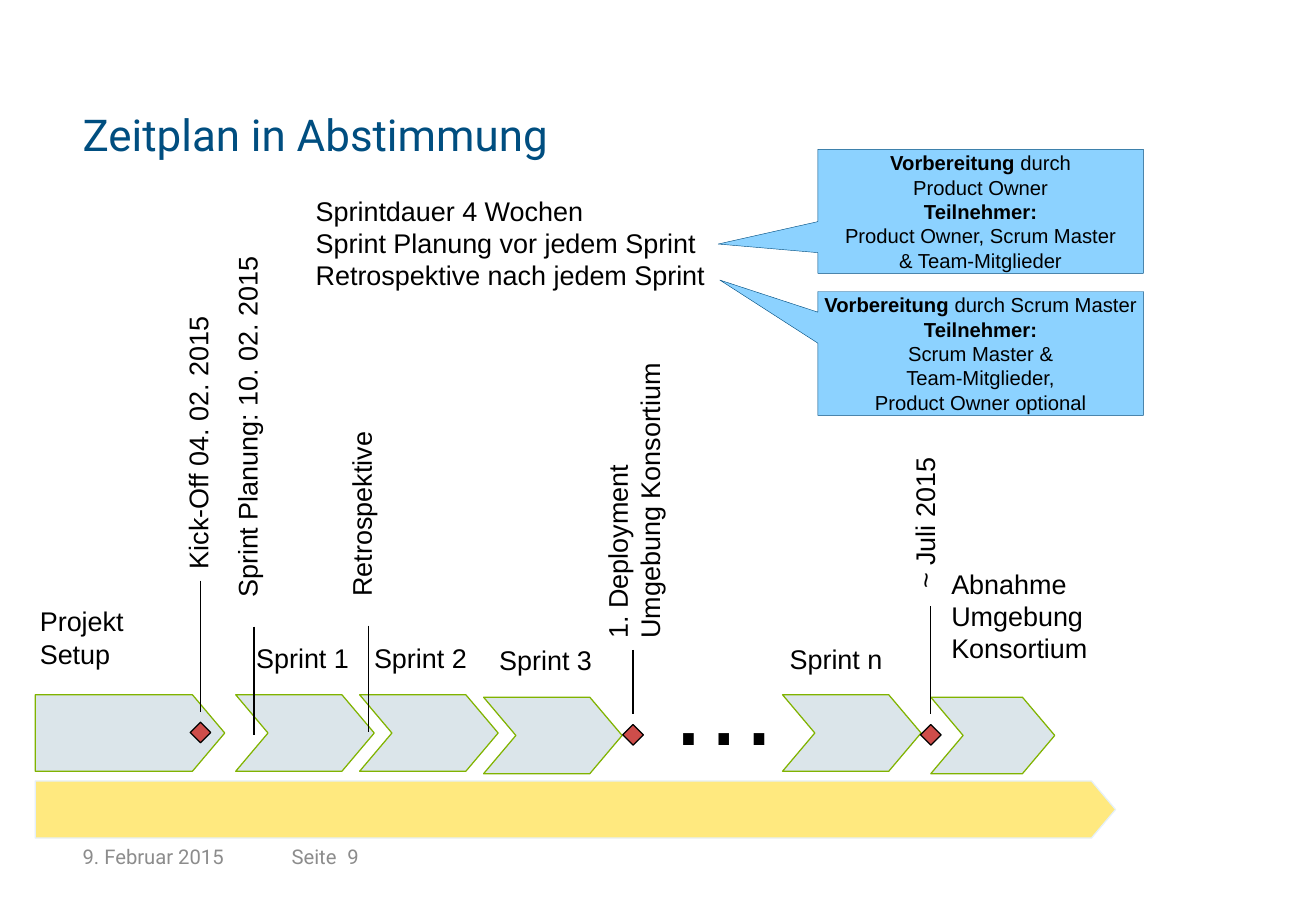
from dataclasses import dataclass

from lxml import etree
from pptx import Presentation
from pptx.dml.color import RGBColor
from pptx.enum.shapes import MSO_CONNECTOR, MSO_SHAPE
from pptx.enum.text import MSO_ANCHOR, PP_ALIGN
from pptx.oxml.ns import qn
from pptx.util import Inches, Pt

LINE = MSO_CONNECTOR.STRAIGHT
RECT, PLATE = MSO_SHAPE.RECTANGLE, MSO_SHAPE.PENTAGON
CHEVRON, CALLOUT = MSO_SHAPE.CHEVRON, MSO_SHAPE.RECTANGULAR_CALLOUT
TOP, MIDDLE, BOTTOM = MSO_ANCHOR.TOP, MSO_ANCHOR.MIDDLE, MSO_ANCHOR.BOTTOM
LEFT, CENTER, RIGHT = PP_ALIGN.LEFT, PP_ALIGN.CENTER, PP_ALIGN.RIGHT


@dataclass(frozen=True)
class Theme:
    head: str = "Roboto"
    body: str = "Arial"
    navy: str = "004E80"
    gray: str = "8C8C8C"
    black: str = "000000"
    gold: str = "FFD500"
    pale: str = "E5F0F9"
    steel: str = "B9CCD7"
    green: str = "80B300"
    red: str = "CE4D4A"
    sky: str = "66C3FF"
    title: int = 26
    text: int = 16
    small: int = 12
    dots: int = 66
    thin: float = 0.75
    hair: float = 0.25


THEME = Theme()

# Phase: column, width, row shift, label column, label row, label
PITCH = 10.2
PHASES = [
    (16.5, 11.4, 0, 17.2, 37.3, "Sprint 1"),
    (16.5 + PITCH, 11.4, 0, 26.9, 37.3, "Sprint 2"),
    (16.5 + 2 * PITCH, 11.4, 0.2, 37.2, 37.5, "Sprint 3"),
    (61.5, 11.4, 0, 61.1, 37.4, "Sprint n"),
    (73.7, 10.2, 0.2, 74.4, 31.2, "Abnahme\nUmgebung\nKonsortium"),
]

# Event: column, line top, line end, label centre, label foot, length, label, diamond row
EVENTS = [
    (13.6, 32.8, 43.6, 13.55, 32.85, 25.7, "Kick-Off 04. 02. 2015", 45.3),
    (18, 36.6, 45.5, 17.6, 35.2, 34, "Sprint Planung: 10. 02. 2015", None),
    (27.4, 36.5, 45.3, 27, 35.1, 17.4, "Retrospektive", None),
    (49.2, 38.5, 43.8, 49.6, 38.55, 27.8, "1. Deployment\nUmgebung Konsortium", 45.5),
    (73.7, 34.9, 43.8, 73.35, 34.45, 14.3, "~ Juli 2015", 45.5),
]

# Callout: row, pointer, lines of (text, bold) runs
CALLOUTS = [
    (0, (-0.806, 0.264), [
        [("Vorbereitung", True), (" durch", False)],
        [("Product Owner", False)],
        [("Teilnehmer:", True)],
        [("Product Owner, Scrum Master", False)],
        [("& Team-Mitglieder", False)],
    ]),
    (11.7, (-0.801, -0.593), [
        [("Vorbereitung", True), (" durch Scrum Master", False)],
        [("Teilnehmer:", True)],
        [("Scrum Master &", False)],
        [("Team-Mitglieder,", False)],
        [("Product Owner optional", False)],
    ]),
]


def grid(*cells):
    """Turn columns and rows of a tenth of an inch into lengths."""
    return [Inches(cell / 10) for cell in cells]


def style(para, face, size, color, align=LEFT):
    para.alignment = align
    para.font.name = face
    para.font.size = Pt(size)
    para.font.color.rgb = RGBColor.from_string(color)


def trim(frame):
    frame.margin_left = frame.margin_right = 0
    frame.margin_top = frame.margin_bottom = 0


def label(slide, box, paras, face=THEME.body, size=THEME.text, color=THEME.black,
          align=LEFT, anchor=TOP, flush=False, turn=0):
    """Write one paragraph per item; a newline inside an item is a line break."""
    shape = slide.shapes.add_textbox(*grid(*box))
    shape.rotation = turn
    frame = shape.text_frame
    frame.word_wrap = True
    frame.vertical_anchor = anchor
    if flush:
        trim(frame)
    for i, text in enumerate(paras):
        para = frame.paragraphs[0] if i == 0 else frame.add_paragraph()
        para.text = text.replace("\n", "\v")
        style(para, face, size, color, align)


def block(slide, kind, box, fill, line, width=THEME.thin, alpha=100, adjust=()):
    shape = slide.shapes.add_shape(kind, *grid(*box))
    shape.shadow.inherit = False
    shape.fill.solid()
    shape.fill.fore_color.rgb = RGBColor.from_string(fill)
    if alpha < 100:
        tint = shape.fill._xPr.find(qn("a:solidFill"))[0]
        etree.SubElement(tint, qn("a:alpha"), val=str(alpha * 1000))
    shape.line.color.rgb = RGBColor.from_string(line)
    shape.line.width = Pt(width)
    for i, value in enumerate(adjust):
        shape.adjustments[i] = value
    return shape


def stem(slide, x, top, end):
    line = slide.shapes.add_connector(LINE, *grid(x, top, x, end))
    line.line.color.rgb = RGBColor.from_string(THEME.black)
    line.line.width = Pt(THEME.thin)
    etree.SubElement(line._element.spPr, qn("a:effectLst"))


def footer(slide, box):
    x, y, _, high = box
    parts = [(0, 14.1, "9. Februar 2015", LEFT), (14.1, 6.8, "Seite", RIGHT),
             (21.8, 25.3, "9", LEFT)]
    for col, wide, text, align in parts:
        label(slide, (x + col, y, wide, high), [text], THEME.head, THEME.small,
              THEME.gray, align, flush=True)


def timeline(slide, box):
    x, y, wide, high = box
    tall, row = 6.3, y + 42.2
    point = [0.422]
    block(slide, PLATE, (x, y + high - 4.7, wide, 4.7), THEME.gold, THEME.pale,
          alpha=50, adjust=point)
    block(slide, PLATE, (x, row, 15.6, tall), THEME.steel, THEME.green,
          alpha=50, adjust=point)
    label(slide, (x - 0.6, y + 34.3, 12, 7.1), ["Projekt\nSetup"])
    for col, span, shift, left, top, text in PHASES:
        block(slide, CHEVRON, (x + col, row + shift, span, tall), THEME.steel,
              THEME.green, alpha=50, adjust=point)
        label(slide, (x + left, y + top, 14.8, 4), [text])
    label(slide, (x + 51.1, y + 36.7, 11.3, 12.1), ["…"], size=THEME.dots)
    for event in EVENTS:
        mark(slide, x, y, *event)


def mark(slide, x, y, col, top, end, mid, foot, span, text, gem):
    """Draw an event: its stem, its upright label and, if any, its diamond."""
    stem(slide, x + col, y + top, y + end)
    deep = 7.1 if "\n" in text else 4
    label(slide, (x + mid - span / 2, y + foot - span / 2 - deep / 2, span, deep),
          [text], turn=270)
    if gem:
        side = 1.2
        block(slide, RECT, (x + col - side / 2, y + gem - side / 2, side, side),
              THEME.red, THEME.black).rotation = 45


def callouts(slide, box):
    x, y, wide, _ = box
    for row, tip, lines in CALLOUTS:
        shape = block(slide, CALLOUT, (x, y + row, wide, 10.2), THEME.sky,
                      THEME.navy, THEME.hair, 75, tip)
        frame = shape.text_frame
        frame.word_wrap = True
        frame.vertical_anchor = MIDDLE
        trim(frame)
        para = frame.paragraphs[0]
        style(para, THEME.body, THEME.small, THEME.black, CENTER)
        for i, runs in enumerate(lines):
            if i:
                para.add_line_break()
            for text, bold in runs:
                run = para.add_run()
                run.text = text
                run.font.bold = bold


def main():
    deck = Presentation()
    deck.slide_width, deck.slide_height = grid(108.3, 75)
    slide = deck.slides.add_slide(deck.slide_layouts[6])
    label(slide, (6.8, 5.2, 96, 8), ["Zeitplan in Abstimmung"], THEME.head,
          THEME.title, THEME.navy, anchor=BOTTOM, flush=True)
    footer(slide, (6.8, 69.5, 47.1, 4))
    timeline(slide, (2.9, 15, 88.9, 54))
    label(slide, (25, 15.5, 42.3, 10.1), [
        "Sprintdauer 4 Wochen",
        "Sprint Planung vor jedem Sprint",
        "Retrospektive nach jedem Sprint",
    ])
    callouts(slide, (67.3, 12.3, 26.8, 21.9))
    deck.save("out.pptx")


if __name__ == "__main__":
    main()
